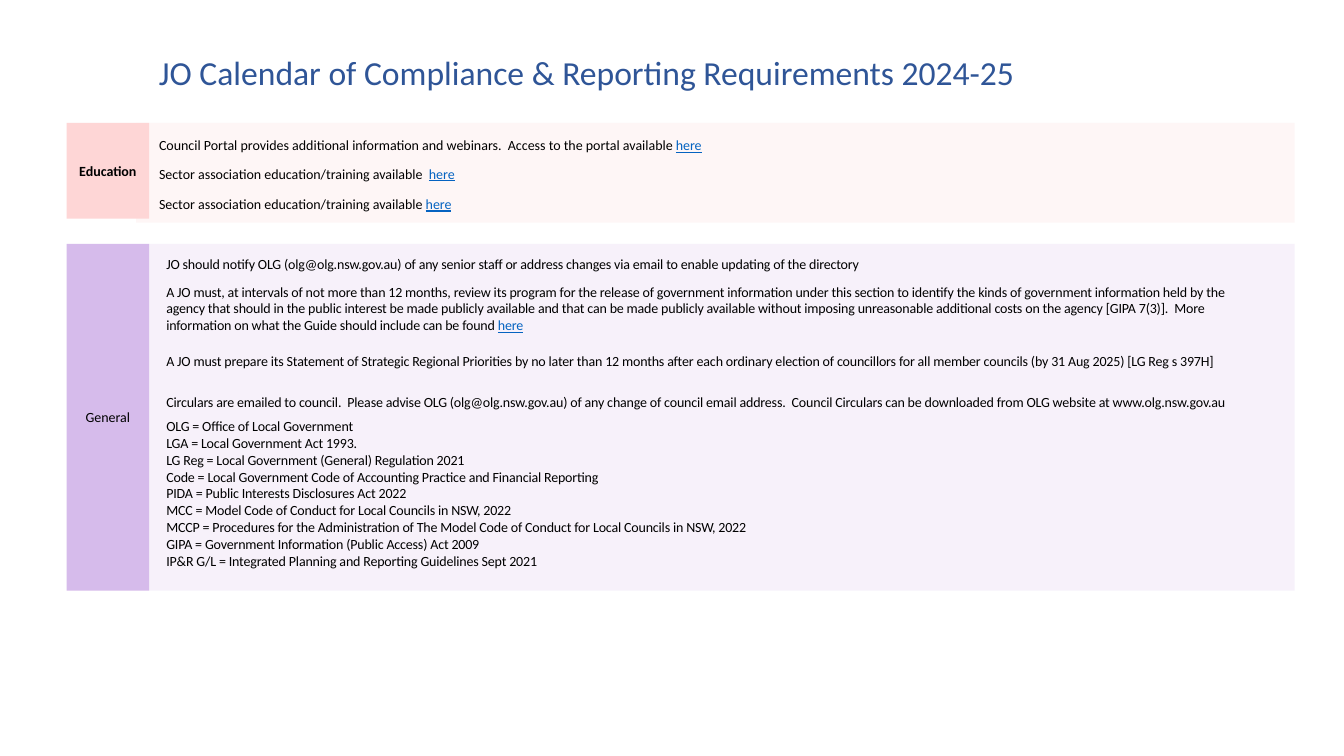
from lxml.etree import SubElement
from pptx import Presentation
from pptx.dml.color import RGBColor
from pptx.enum.shapes import MSO_SHAPE as Shape
from pptx.enum.text import MSO_ANCHOR as Anchor, MSO_AUTO_SIZE as AutoSize, PP_ALIGN as Align
from pptx.oxml.ns import qn
from pptx.util import Pt

BLACK = RGBColor(0x00, 0x00, 0x00)
TITLE_BLUE = RGBColor(0x2F, 0x55, 0x97)
LINK_BLUE = RGBColor(0x05, 0x63, 0xC1)
PINK = RGBColor(0xFE, 0xD6, 0xD6)
LILAC = RGBColor(0xD6, 0xBB, 0xEB)
LILAC_BAND = RGBColor(0xD7, 0xBC, 0xEA)

LABEL_LEFT, LABEL_WIDTH = 47.5, 59
BAND_LEFT, BAND_RIGHT = 106.5, 924.8
NOTE_LEFT = 118.8

TRAININGS = [
    (94.3, "Council Portal provides additional information and webinars.  Access to the portal available "),
    (114.5, "Sector association education/training available  "),
    (136.1, "Sector association education/training available "),
]

# Top, width, height, wording, link word
NOTES = [
    (182.2, 614, 12.2, "JO should notify OLG (olg@olg.nsw.gov.au) of any senior staff or address changes "
     "via email to enable updating of the directory", ""),
    (202.3, 767, 36, "A JO must, at intervals of not more than 12 months, review its program for the release of "
     "government information under this section to identify the kinds of government information held by the agency "
     "that should in the public interest be made publicly available and that can be made publicly available without "
     "imposing unreasonable additional costs on the agency [GIPA 7(3)].  More information on what the Guide should "
     "include can be found ", "here"),
    (252, 767, 12.2, "A JO must prepare its Statement of Strategic Regional Priorities by no later than 12 months "
     "after each ordinary election of councillors for all member councils (by 31 Aug 2025) [LG Reg s 397H]", ""),
    (280.8, 806, 12.2, "Circulars are emailed to council.  Please advise OLG (olg@olg.nsw.gov.au) of any change of "
     "council email address.  Council Circulars can be downloaded from OLG website at www.olg.nsw.gov.au", ""),
]

GLOSSARY = [
    "OLG = Office of Local Government",
    "LGA = Local Government Act 1993.",
    "LG Reg = Local Government (General) Regulation 2021",
    "Code = Local Government Code of Accounting Practice and Financial Reporting",
    "PIDA = Public Interests Disclosures Act 2022",
    "MCC = Model Code of Conduct for Local Councils in NSW, 2022",
    "MCCP = Procedures for the Administration of The Model Code of Conduct for Local Councils in NSW, 2022",
    "GIPA = Government Information (Public Access) Act 2009",
    "IP&R G/L = Integrated Planning and Reporting Guidelines Sept 2021",
]


class CalendarPage:
    font_name = "Calibri"
    text_size = 10

    def __init__(self, deck):
        self.page = deck.slides.add_slide(deck.slide_layouts[1])

    def style(self, span, size=text_size, color=BLACK, bold=False, tight=False):
        font = span.font
        font.name, font.size, font.bold = self.font_name, Pt(size), bold
        font.color.rgb = color
        if tight:
            font._element.set("spc", "-10")

    def place(self, box, left, top, width, height):
        box.left, box.top, box.width, box.height = Pt(left), Pt(top), Pt(width), Pt(height)

    def fit(self, frame, anchor, inset=None):
        frame.word_wrap = True
        frame.auto_size = AutoSize.NONE
        frame.vertical_anchor = anchor
        if inset is not None:
            frame.margin_left = frame.margin_right = Pt(inset)
            frame.margin_top = frame.margin_bottom = Pt(inset)

    def title(self, text, left, top, width, height):
        box = self.page.shapes.title
        self.place(box, left, top, width, height)
        box.text_frame.text = text
        self.fit(box.text_frame, Anchor.TOP)
        para = box.text_frame.paragraphs[0]
        para.alignment = Align.CENTER
        self.style(para.runs[0], 24, TITLE_BLUE)

    def block(self, left, top, width, height, color):
        box = self.page.shapes.add_shape(Shape.RECTANGLE, Pt(left), Pt(top), Pt(width), Pt(height))
        box.shadow.inherit = False
        box.fill.solid()
        box.fill.fore_color.rgb = color
        box.line.fill.background()
        return box

    def band(self, left, top, height, color):
        box = self.block(left, top, BAND_RIGHT - left, height, color)
        tint = box.element.spPr.find(qn("a:solidFill"))[0]
        SubElement(tint, qn("a:alpha")).set("val", "20000")
        # Bands lie behind all text
        self.page.shapes[0].element.addprevious(box.element)

    def label(self, text, top, height, color, bold=False):
        box = self.block(LABEL_LEFT, top, LABEL_WIDTH, height, color)
        box.text_frame.text = text
        self.fit(box.text_frame, Anchor.MIDDLE)
        para = box.text_frame.paragraphs[0]
        para.alignment = Align.CENTER
        self.style(para.runs[0], bold=bold)

    def text(self, text, left, top, width, height, link="", note=False):
        box = self.page.shapes.add_textbox(Pt(left), Pt(top), Pt(width), Pt(height))
        self.fit(box.text_frame, Anchor.MIDDLE if note else Anchor.TOP, 0 if note else None)
        para = box.text_frame.paragraphs[0]
        para.text = text
        self.style(para.runs[0], tight=note)
        if link:
            span = para.add_run()
            span.text = link
            self.style(span, color=LINK_BLUE, tight=note)
            span.font.underline = True

    def listing(self, lines, left, top, width, height):
        box = self.page.placeholders[1]
        self.place(box, left, top, width, height)
        box.text_frame.text = "\n".join(lines)
        self.fit(box.text_frame, Anchor.MIDDLE, 0)
        for para in box.text_frame.paragraphs:
            layout = para._p.get_or_add_pPr()
            layout.set("marL", "0")
            layout.set("indent", "0")
            SubElement(layout, qn("a:buNone"))
            para.space_before = Pt(0)
            self.style(para.runs[0], tight=True)


def main():
    deck = Presentation()
    deck.slide_width, deck.slide_height = Pt(960), Pt(540)
    calendar = CalendarPage(deck)
    calendar.title("JO Calendar of Compliance & Reporting Requirements 2024-25", 65.2, 33.1, 707.8, 36)

    # Education
    calendar.band(97.2, 87.8, 71.3, PINK)
    calendar.label("Education", 87.8, 68.4, PINK, bold=True)
    for top, text in TRAININGS:
        calendar.text(text, BAND_LEFT, top, 574, 19.4, link="here")

    # General
    calendar.band(BAND_LEFT, 174.2, 247.7, LILAC_BAND)
    calendar.label("General", 174.2, 247.7, LILAC)
    for top, width, height, text, link in NOTES:
        calendar.text(text, NOTE_LEFT, top, width, height, link, note=True)
    calendar.listing(GLOSSARY, NOTE_LEFT, 298.1, 436.3, 108.7)

    deck.save("out.pptx")


if __name__ == "__main__":
    main()
